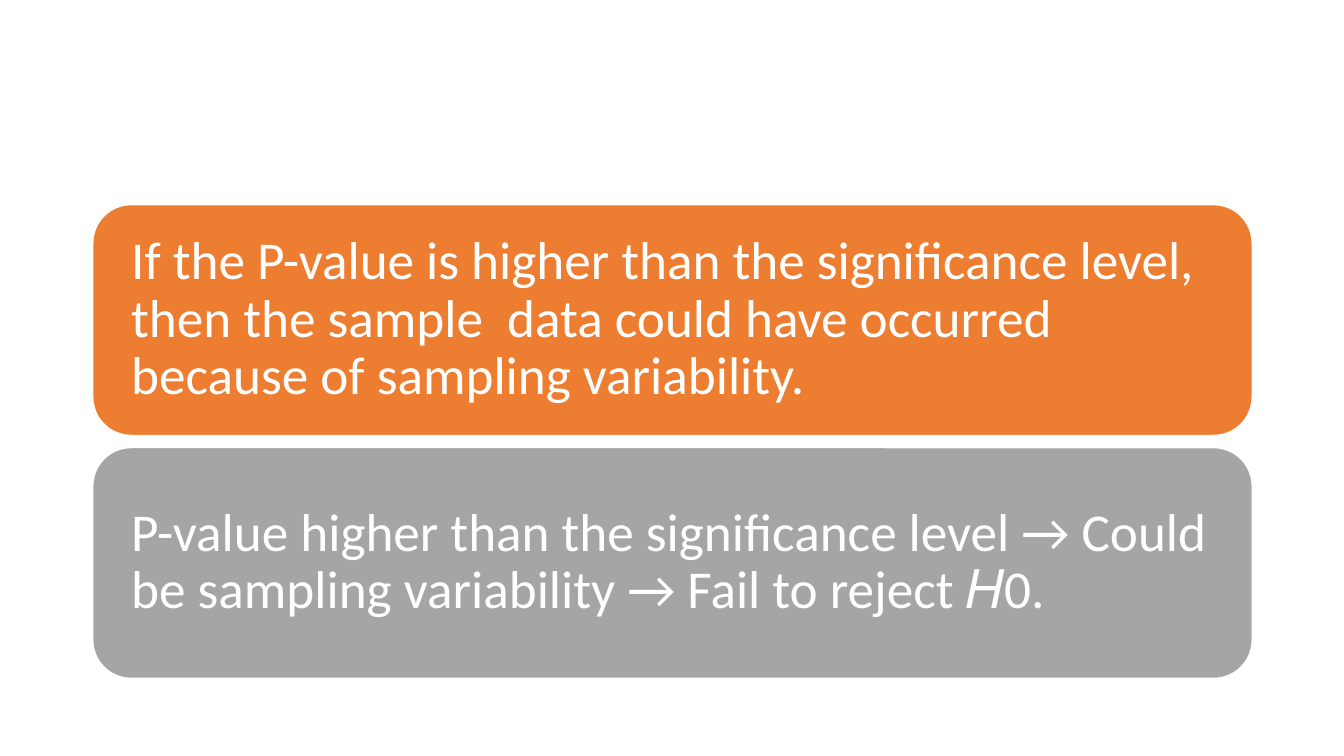
import dataclasses

import pptx
import pptx.dml.color
import pptx.enum.shapes
import pptx.enum.text
import pptx.util


@dataclasses.dataclass(frozen=True)
class Theme:
    """Hold the colours, font and sizes of the slide."""
    font: str = "Calibri"
    size: float = 38
    ink: str = "FFFFFF"
    edge: str = "FFFFFF"
    high: str = "ED7D31"
    fail: str = "A5A5A5"
    rim: float = 1
    lead: float = 0.9
    pad: float = 0.27


class Deck:
    """Draw cards on a slide by rows of a grid."""
    left, top, width, height, gap = 0.92, 2.03, 11.5, 2.29, 0.12

    def __init__(self, theme):
        """Open a blank wide slide."""
        self.theme = theme
        self.file = pptx.Presentation()
        self.file.slide_width = pptx.util.Inches(13.33)
        self.file.slide_height = pptx.util.Inches(7.5)
        self.slide = self.file.slides.add_slide(self.file.slide_layouts[6])

    def style(self, item, form):
        """Set each format value on an item."""
        for name, value in form.items():
            setattr(item, name, value)

    def card(self, row, text, fill):
        """Add a rounded card with its text to a grid row."""
        theme = self.theme
        color = pptx.dml.color.RGBColor.from_string
        top = self.top + row * (self.height + self.gap)
        place = map(pptx.util.Inches, (self.left, top, self.width, self.height))
        kind = pptx.enum.shapes.MSO_SHAPE.ROUNDED_RECTANGLE
        shape = self.slide.shapes.add_shape(kind, *place)
        shape.shadow.inherit = False
        shape.fill.solid()
        shape.fill.fore_color.rgb = color(fill)
        shape.line.color.rgb = color(theme.edge)
        shape.line.width = pptx.util.Pt(theme.rim)
        frame = shape.text_frame
        pad = pptx.util.Inches(theme.pad)
        self.style(frame, {
            "text": text,
            "word_wrap": True,
            "vertical_anchor": pptx.enum.text.MSO_ANCHOR.MIDDLE,
            "margin_left": pad,
            "margin_right": pad,
            "margin_top": pad,
            "margin_bottom": pad,
        })
        para = frame.paragraphs[0]
        self.style(para, {
            "alignment": pptx.enum.text.PP_ALIGN.LEFT,
            "line_spacing": theme.lead,
        })
        font = para.runs[0].font
        self.style(font, {
            "name": theme.font,
            "size": pptx.util.Pt(theme.size),
        })
        font.color.rgb = color(theme.ink)


def main():
    """Build the slide and save it."""
    theme = Theme()
    deck = Deck(theme)
    cards = [
        ("If the P-value is higher than the significance level, then the "
         "sample  data could have occurred because of sampling variability.",
         theme.high),
        ("P-value higher than the significance level → Could be sampling "
         "variability → Fail to reject 𝐻0.", theme.fail),
    ]
    for row, (text, fill) in enumerate(cards):
        deck.card(row, text, fill)
    deck.file.save("out.pptx")


if __name__ == "__main__":
    main()
